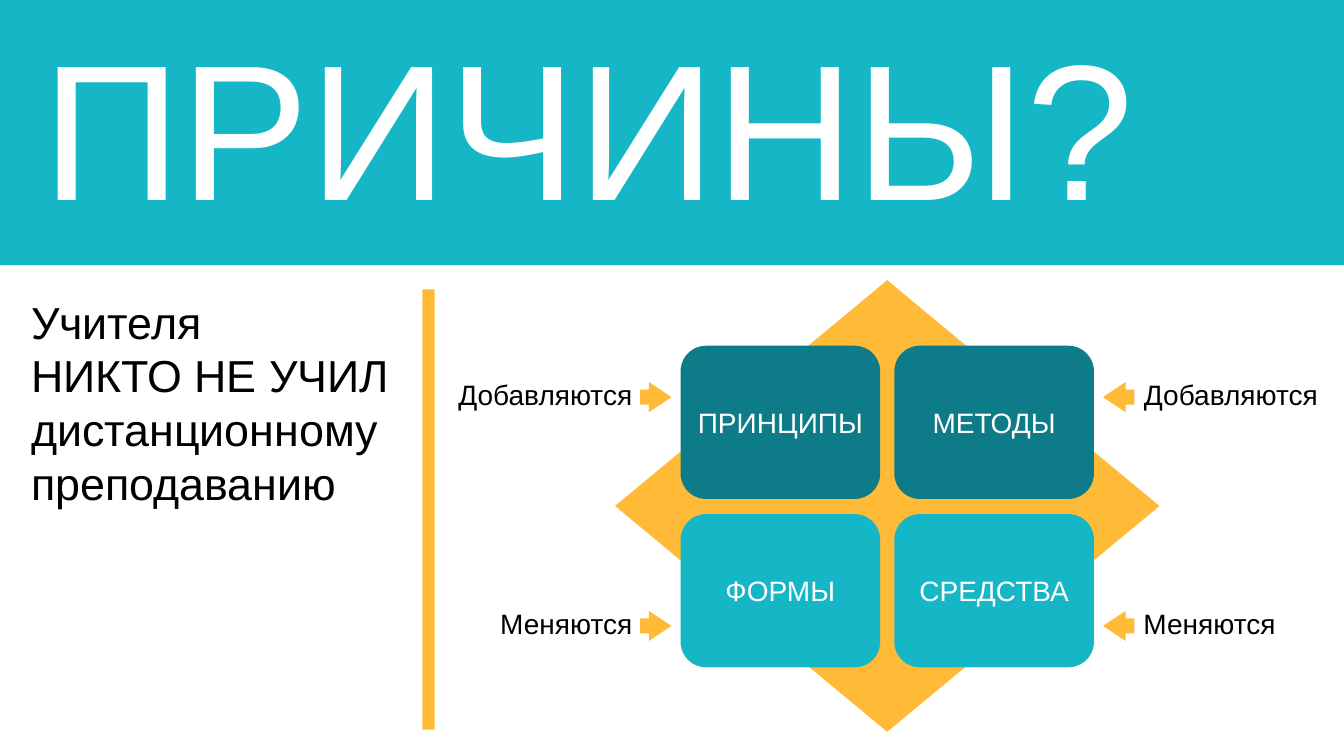
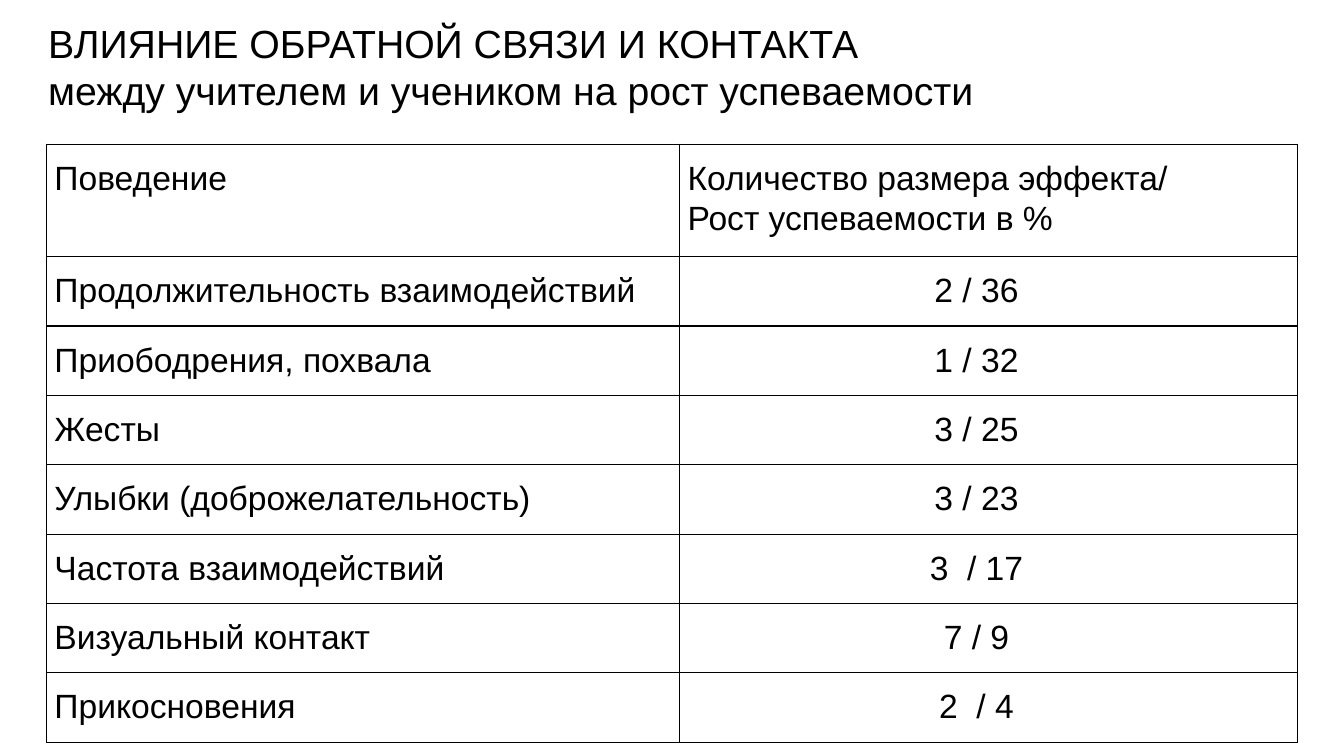
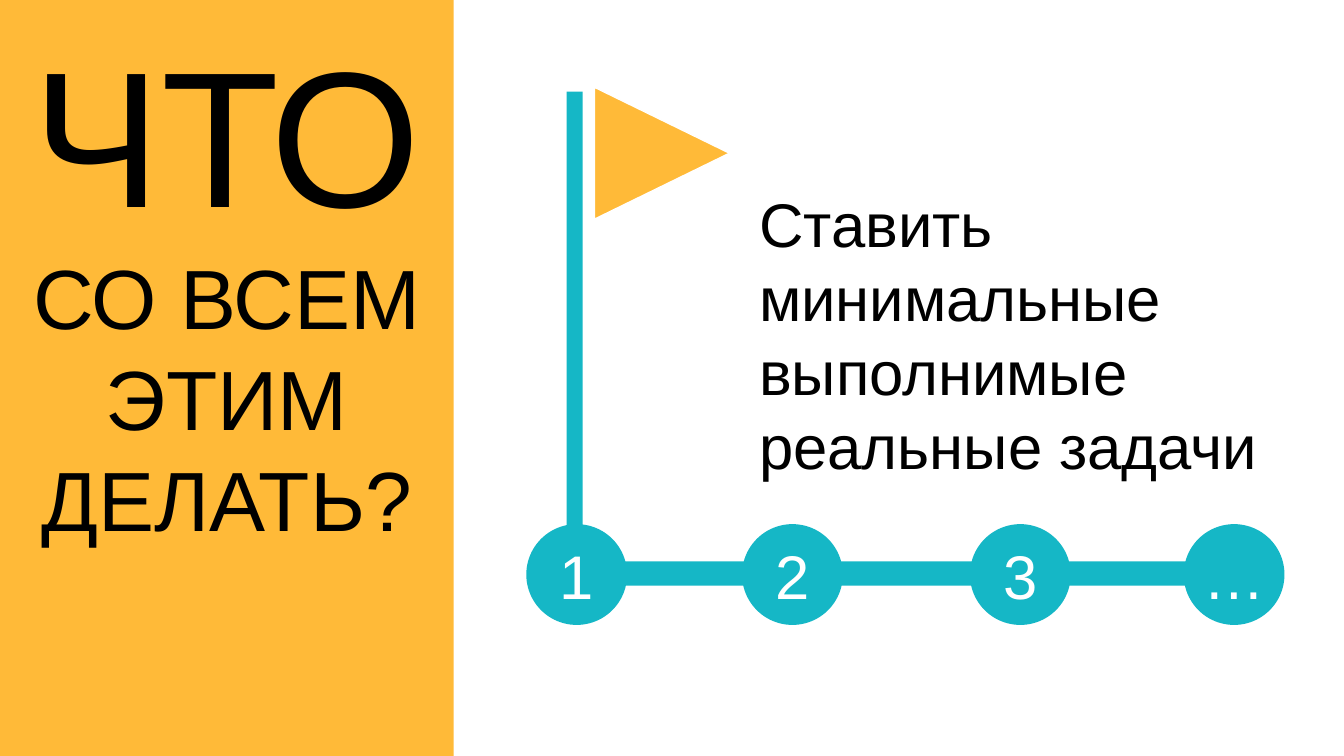
from lxml import etree
from pptx import Presentation
from pptx.dml.color import RGBColor
from pptx.enum.shapes import MSO_SHAPE
from pptx.enum.text import MSO_ANCHOR, PP_ALIGN
from pptx.oxml.ns import qn
from pptx.util import Inches, Pt

RECTANGLE = MSO_SHAPE.RECTANGLE
ROUNDED = MSO_SHAPE.ROUNDED_RECTANGLE
DIAMOND = MSO_SHAPE.DIAMOND
OVAL = MSO_SHAPE.OVAL
TRIANGLE = MSO_SHAPE.ISOSCELES_TRIANGLE
RIGHT_ARROW = MSO_SHAPE.RIGHT_ARROW
LEFT_ARROW = MSO_SHAPE.LEFT_ARROW
LEFT, CENTER, RIGHT = PP_ALIGN.LEFT, PP_ALIGN.CENTER, PP_ALIGN.RIGHT
MIDDLE = MSO_ANCHOR.MIDDLE

WIDTH, HEIGHT = 13.33, 7.5
FONT = "Arial"
TEAL, DARK_TEAL, ORANGE = "15B7C6", "0E7C88", "FFBA38"
BLACK, WHITE = "000000", "FFFFFF"
TITLE_SIZE, LABEL_SIZE = 138, 20


def color(hex_value):
    return RGBColor.from_string(hex_value)


class Deck:
    """Holds the style and the current slide."""

    def __init__(self):
        self.presentation = Presentation()
        self.presentation.slide_width = Inches(WIDTH)
        self.presentation.slide_height = Inches(HEIGHT)
        self.slide = None

    def new_slide(self):
        self.slide = self.presentation.slides.add_slide(self.presentation.slide_layouts[6])

    def fill_paragraph(self, paragraph, text, size, font_color=BLACK, align=LEFT):
        """Add the text, turning each newline into a line break."""
        paragraph.alignment = align
        for index, line in enumerate(text.split("\n")):
            if index:
                paragraph.add_line_break()
            run = paragraph.add_run()
            run.text = line
            run.font.size = Pt(size)
            run.font.name = FONT
            run.font.color.rgb = color(font_color)

    def text(self, left, top, width, height, *parts, font_color=BLACK,
             align=LEFT, wrap=True, space_before=0):
        """Add a text box; each part is a (text, size) paragraph."""
        box = self.slide.shapes.add_textbox(Inches(left), Inches(top), Inches(width), Inches(height))
        frame = box.text_frame
        frame.word_wrap = wrap
        for index, (content, size) in enumerate(parts):
            paragraph = frame.add_paragraph() if index else frame.paragraphs[0]
            paragraph.space_before = Pt(space_before)
            self.fill_paragraph(paragraph, content, size, font_color, align)

    def shape(self, kind, left, top, width, height, fill, line=None):
        shape = self.slide.shapes.add_shape(
            kind, Inches(left), Inches(top), Inches(width), Inches(height))
        shape.shadow.inherit = False
        shape.fill.solid()
        shape.fill.fore_color.rgb = color(fill)
        if line:
            shape.line.color.rgb = color(line)
            shape.line.width = Pt(1)
        else:
            shape.line.fill.background()
        return shape

    def labelled_shape(self, kind, left, top, width, height, fill, label, size):
        shape = self.shape(kind, left, top, width, height, fill)
        frame = shape.text_frame
        frame.vertical_anchor = MIDDLE
        frame.margin_left = frame.margin_right = 0
        self.fill_paragraph(frame.paragraphs[0], label, size, WHITE, CENTER)

    def arrow(self, kind, left, top):
        arrow = self.shape(kind, left, top, 0.31, 0.3, ORANGE)
        arrow.adjustments[0] = 0.5
        arrow.adjustments[1] = 0.75

    def border(self, cell):
        properties = cell._tc.get_or_add_tcPr()
        for position, side in enumerate(("a:lnL", "a:lnR", "a:lnT", "a:lnB")):
            line = etree.Element(qn(side), w=str(Pt(1)))
            fill = etree.SubElement(line, qn("a:solidFill"))
            etree.SubElement(fill, qn("a:srgbClr"), val=BLACK)
            properties.insert(position, line)

    def table(self, left, top, column_widths, row_heights, rows, size):
        frame = self.slide.shapes.add_table(
            len(rows), len(column_widths), Inches(left), Inches(top),
            Inches(sum(column_widths)), Inches(sum(row_heights)))
        table = frame.table
        table.first_row = table.horz_banding = False
        for column, width in zip(table.columns, column_widths):
            column.width = Inches(width)
        for row_index, (values, height) in enumerate(zip(rows, row_heights)):
            table.rows[row_index].height = Inches(height)
            for column_index, value in enumerate(values):
                cell = table.cell(row_index, column_index)
                cell.margin_left, cell.margin_right = Inches(0.08), Inches(0.32)
                cell.margin_top = cell.margin_bottom = Inches(0.13)
                cell.fill.background()
                self.border(cell)
                paragraph = cell.text_frame.paragraphs[0]
                paragraph.line_spacing = 1.07
                paragraph.space_before = paragraph.space_after = Pt(2)
                align = CENTER if row_index and column_index else LEFT
                self.fill_paragraph(paragraph, value, size, align=align)


def add_reasons(deck):
    deck.new_slide()
    deck.shape(RECTANGLE, 0, 0, WIDTH, 2.63, TEAL)
    deck.text(0.32, 0.02, 11.14, 2.42, ("ПРИЧИНЫ?", TITLE_SIZE), font_color=WHITE, wrap=False)
    deck.text(0.21, 2.87, 4.31, 2.26,
              ("Учителя\nНИКТО НЕ УЧИЛ дистанционному преподаванию", 32))
    deck.shape(RECTANGLE, 4.19, 2.87, 0.12, 4.37, ORANGE)
    deck.shape(DIAMOND, 6.1, 2.78, 5.4, 4.48, ORANGE)

    card_rows = (
        (3.43, DARK_TEAL, ("ПРИНЦИПЫ", "МЕТОДЫ")),
        (5.1, TEAL, ("ФОРМЫ", "СРЕДСТВА")),
    )
    for top, fill, labels in card_rows:
        for left, label in zip((6.75, 8.87), labels):
            deck.labelled_shape(ROUNDED, left, top, 1.98, 1.52, fill, label, LABEL_SIZE)

    for label, width, top in (("Добавляются", 1.94, 3.7), ("Меняются", 1.52, 5.97)):
        for left in (6.37 - width, 11.23):
            deck.text(left, top, width, 0.44, (label, LABEL_SIZE), align=RIGHT, wrap=False)
        deck.arrow(RIGHT_ARROW, 6.35, top + 0.09)
        deck.arrow(LEFT_ARROW, 10.94, top + 0.09)


def add_feedback_table(deck):
    deck.new_slide()
    deck.text(0.38, 0.14, 12.2, 1.04,
              ("ВЛИЯНИЕ ОБРАТНОЙ СВЯЗИ И КОНТАКТА\n"
               "между учителем и учеником на рост успеваемости", 28))
    rows = (
        ("Поведение", "Количество размера эффекта/\nРост успеваемости в %"),
        ("Продолжительность взаимодействий", "2 / 36"),
        ("Приободрения, похвала", "1 / 32"),
        ("Жесты", "3 / 25"),
        ("Улыбки (доброжелательность)", "3 / 23"),
        ("Частота взаимодействий", "3  / 17"),
        ("Визуальный контакт", "7 / 9"),
        ("Прикосновения", "2  / 4"),
    )
    row_heights = [1.11] + [0.68] * (len(rows) - 1)
    deck.table(0.46, 1.43, (6.28, 6.13), row_heights, rows, 24)


def add_steps(deck):
    deck.new_slide()
    deck.text(7.43, 1.8, 5.31, 3.06,
              ("Ставить минимальные выполнимые реальные задачи", 44), space_before=6)
    deck.shape(RECTANGLE, 0, 0, 4.5, HEIGHT, ORANGE)
    deck.text(0, 0.09, 4.5, 5.45, ("ЧТО", TITLE_SIZE),
              ("СО ВСЕМ\nЭТИМ\nДЕЛАТЬ?", 60), align=CENTER)
    deck.shape(RECTANGLE, 5.6, 5.57, 6.94, 0.24, TEAL)
    for left, label in zip((5.22, 7.36, 9.62, 11.74), "123…"):
        deck.labelled_shape(OVAL, left, 5.2, 1, 1, TEAL, label, 44)
    deck.shape(RECTANGLE, 5.62, 0.91, 0.16, 4.41, TEAL)
    flag = deck.shape(TRIANGLE, 5.91, 0.85, 1.31, 1.34, ORANGE, line=WHITE)
    flag.rotation = 90


def main():
    deck = Deck()
    add_reasons(deck)
    add_feedback_table(deck)
    add_steps(deck)
    deck.presentation.save("out.pptx")


if __name__ == "__main__":
    main()
